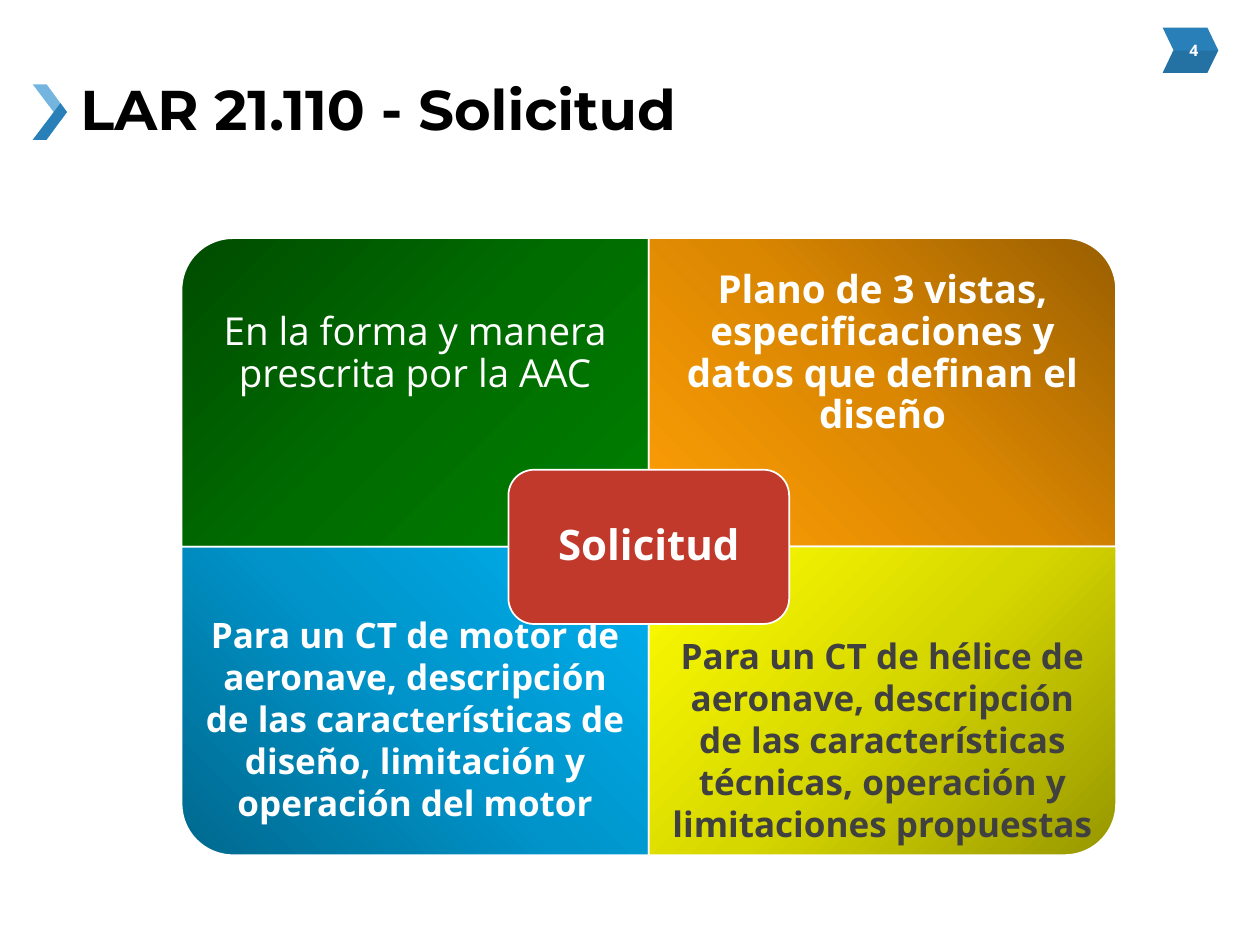
from copy import deepcopy
from pptx import Presentation
from pptx.dml.color import RGBColor
from pptx.enum.shapes import MSO_SHAPE
from pptx.enum.text import MSO_ANCHOR, PP_ALIGN
from pptx.oxml.ns import qn
from pptx.util import Cm, Pt
from lxml.etree import SubElement

WHITE = RGBColor(0xFF, 0xFF, 0xFF)
BLACK = RGBColor(0x00, 0x00, 0x00)
GRAY = RGBColor(0x40, 0x40, 0x40)
RED = RGBColor(0xC0, 0x39, 0x2B)
BLUE = RGBColor(0x29, 0x80, 0xB9)
LIGHT = RGBColor(0x74, 0xB5, 0xE0)
NAVY = RGBColor(0x1F, 0x60, 0x8B)
GREENS = [RGBColor(0x00, 0x4C, 0x00), RGBColor(0x00, 0x6C, 0x00), RGBColor(0x00, 0x80, 0x00)]
GOLDS = [RGBColor(0x9A, 0x5F, 0x01), RGBColor(0xDB, 0x87, 0x01), RGBColor(0xFF, 0x9F, 0x06)]
SKIES = [RGBColor(0x00, 0x68, 0x8E), RGBColor(0x00, 0x94, 0xCA), RGBColor(0x00, 0xB0, 0xF0)]
LEMONS = [RGBColor(0x97, 0x97, 0x00), RGBColor(0xD7, 0xD7, 0x00), RGBColor(0xFF, 0xFF, 0x00)]

deck = Presentation()
deck.slide_width, deck.slide_height = Cm(25.4), Cm(19.05)
slide = deck.slides.add_slide(deck.slide_layouts[6])
shapes = slide.shapes


def add_text(text, box, size, color, pad=0.25, base=None, **style):
    frame = shapes.add_textbox(*map(Cm, box)).text_frame
    frame.word_wrap = True
    frame.vertical_anchor = MSO_ANCHOR.MIDDLE
    for side in ("left", "right", "top", "bottom"):
        setattr(frame, "margin_" + side, Cm(pad))
    if base:
        frame.margin_bottom = Cm(base)
    par = frame.paragraphs[0]
    par.alignment = style.pop("align", PP_ALIGN.CENTER)
    par.line_spacing = style.pop("lines", 1.0)
    run = par.add_run()
    run.text = text
    look = {"name": "Open Sans", "bold": True, "size": Pt(size)} | style
    for key, value in look.items():
        setattr(run.font, key, value)
    run.font.color.rgb = color


def add_path(points, color):
    start, *rest = [(x * 100, y * 100) for x, y in points]
    pen = shapes.build_freeform(*start, scale=Cm(0.01))
    pen.add_line_segments(rest, close=True)
    form = pen.convert_to_shape()
    form.shadow.inherit = False
    form.fill.solid()
    form.fill.fore_color.rgb = color
    form.line.fill.background()
    return form


# Page number tag
tag = shapes.add_shape(MSO_SHAPE.CHEVRON, Cm(23.44), Cm(0.56), Cm(1.12), Cm(0.91))
tag.adjustments[0] = 0.24
tag.shadow.inherit = False
tag.fill.solid()
tag.fill.fore_color.rgb = BLUE
tag.line.fill.background()
shade = add_path([(23.65, 1.02), (24.56, 1.02), (24.33, 1.47), (23.44, 1.47)], NAVY)
tint = shade._element.spPr.find(".//" + qn("a:srgbClr"))
SubElement(tint, qn("a:alpha")).set("val", "45000")
add_text("4", (23.39, 0.64, 1.35, 0.76), 9, WHITE)

# Title with its arrow
add_path([(0.66, 1.7), (1.22, 2.44), (1.35, 2.26), (0.94, 1.7)], LIGHT)
add_path([(0.66, 2.82), (1.22, 2.08), (1.35, 2.26), (0.94, 2.82)], BLUE)
add_text("LAR 21.110 - Solicitud", (1.37, 1.02, 21.89, 2.49), 32, BLACK,
         name="Montserrat", align=PP_ALIGN.LEFT, lines=0.9)

# Four quadrants: column, row, turn, gradient, text, text style
LEFT, TOP, WIDE, HIGH, DEEP = 3.66, 4.8, 9.42, 6.22, 4.67
upper = {"size": 22, "color": WHITE, "pad": 0.43, "lines": 0.9}
lower = {"size": 20, "color": WHITE, "pad": 0.41}
quads = [
    (0, 0, 270, GREENS, "En la forma y manera prescrita por la AAC",
     upper | {"bold": False}),
    (1, 0, 0, GOLDS, "Plano de 3 vistas, especificaciones y datos que definan el diseño",
     upper),
    (0, 1, 180, SKIES, "Para un CT de motor de aeronave, descripción de las características "
     "de diseño, limitación y operación del motor", lower | {"base": 1.26}),
    (1, 1, 90, LEMONS, "Para un CT de hélice de aeronave, descripción de las características "
     "técnicas, operación y limitaciones propuestas", lower | {"color": GRAY}),
]
for col, row, turn, shades, text, style in quads:
    x, y = LEFT + col * WIDE, TOP + row * HIGH
    w, h = (HIGH, WIDE) if turn % 180 else (WIDE, HIGH)
    quad = shapes.add_shape(MSO_SHAPE.ROUND_1_RECTANGLE, Cm(x + (WIDE - w) / 2),
                            Cm(y + (HIGH - h) / 2), Cm(w), Cm(h))
    quad.rotation = turn
    quad.shadow.inherit = False
    quad.line.color.rgb = WHITE
    quad.line.width = Pt(1)
    quad.fill.gradient()
    quad.fill.gradient_angle = 225
    stops = quad._element.spPr.find(".//" + qn("a:gsLst"))
    stops.append(deepcopy(stops[-1]))
    for i, stop in enumerate(quad.fill.gradient_stops):
        stop.position = i / 2
        stop.color.rgb = shades[i]
    add_text(text, (x, y + row * (HIGH - DEEP), WIDE, DEEP), **style)

# Centre label
hub = shapes.add_shape(MSO_SHAPE.ROUNDED_RECTANGLE, Cm(10.25), Cm(9.47), Cm(5.66), Cm(3.11))
hub.shadow.inherit = False
hub.fill.solid()
hub.fill.fore_color.rgb = RED
hub.line.color.rgb = WHITE
hub.line.width = Pt(1)
add_text("Solicitud", (10.4, 9.62, 5.36, 2.81), 24, WHITE, lines=0.9)

deck.save("out.pptx")
